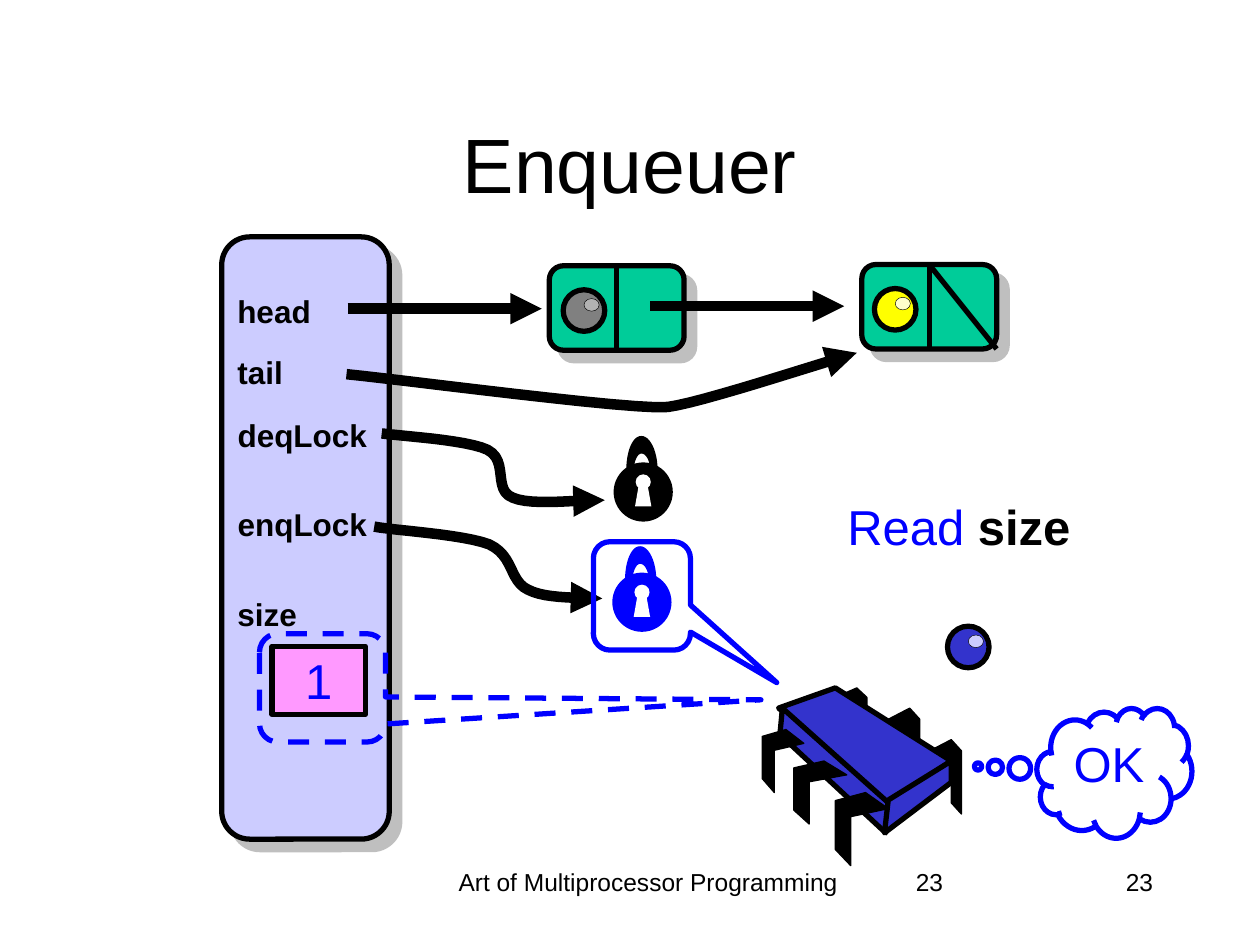
import pptx
import pptx.util
import pptx.dml.color
import pptx.enum.dml
import pptx.enum.shapes
import pptx.enum.text
import pptx.oxml
import pptx.oxml.ns

COLORS = {
    "black": "000000", "white": "FFFFFF", "blue": "0000FF", "lavender": "CCCCFF",
    "green": "00CC99", "gray": "808080", "silver": "B2B2B2", "yellow": "FFFF00",
    "cream": "FFFFCC", "pink": "FF99FF", "chip": "3333CC",
}
COLUMNS, ROWS = 100, 75
FONT = "Arial"
SHAPE = pptx.enum.shapes.MSO_SHAPE
ALIGN = pptx.enum.text.PP_ALIGN
ANCHOR = pptx.enum.text.MSO_ANCHOR
NAMESPACE = pptx.oxml.ns.nsdecls("a")
SHADOW = (f'<a:outerShdw {NAMESPACE} dist="107950" dir="2700000" algn="ctr" rotWithShape="0">'
          f'<a:srgbClr val="{COLORS["gray"]}"><a:alpha val="50000"/></a:srgbClr></a:outerShdw>')

BACK_LEG = [(0, .15), (.68, 0), (1, .15), (1, 1), (.68, .85), (.68, .29), (0, .43)]
FRONT_LEG = [(.57, 0), (1, .22), (.29, .33), (.29, 1), (0, .78), (0, .11)]


def color(name):
    return pptx.dml.color.RGBColor.from_string(COLORS[name])


def write_text(shape, *parts, size=18, ink="black", bold=False, align=ALIGN.CENTER,
               anchor=ANCHOR.TOP, wrap=True):
    frame = shape.text_frame
    frame.word_wrap = wrap
    frame.vertical_anchor = anchor
    paragraph = frame.paragraphs[0]
    paragraph.alignment = align
    for part in parts:
        text, part_ink, part_bold = part if isinstance(part, tuple) else (part, ink, bold)
        run = paragraph.add_run()
        run.text = text
        run.font.name = FONT
        run.font.size = pptx.util.Pt(size)
        run.font.bold = part_bold
        run.font.color.rgb = color(part_ink)


def scaled(outline, left, top, width, height):
    return [(left + x * width, top + y * height) for x, y in outline]


def curve(start, *segments, steps=12):
    points = [start]
    for first, second, end in segments:
        begin = points[-1]
        for step in range(1, steps + 1):
            t = step / steps
            weights = ((1 - t) ** 3, 3 * t * (1 - t) ** 2, 3 * t ** 2 * (1 - t), t ** 3)
            corners = (begin, first, second, end)
            points.append(tuple(sum(w * corner[axis] for w, corner in zip(weights, corners))
                                for axis in (0, 1)))
    return points


class Diagram:
    def __init__(self, presentation):
        self.slide = presentation.slides.add_slide(presentation.slide_layouts[5])
        self.column = presentation.slide_width / COLUMNS
        self.row = presentation.slide_height / ROWS
        self.canvas = self.slide.shapes

    def place(self, *lengths):
        return [round(length * (self.row if index % 2 else self.column))
                for index, length in enumerate(lengths)]

    def group(self):
        self.canvas = self.slide.shapes.add_group_shape().shapes

    def ungroup(self):
        self.canvas = self.slide.shapes

    def title(self, text, *box):
        title = self.slide.shapes.title
        title.left, title.top, title.width, title.height = self.place(*box)
        write_text(title, text, size=44, anchor=ANCHOR.MIDDLE)

    def text(self, *parts, box, **style):
        write_text(self.canvas.add_textbox(*self.place(*box)), *parts, **style)

    def paint(self, shape, fill, line, weight):
        shape.shadow.inherit = False
        if fill:
            shape.fill.solid()
            shape.fill.fore_color.rgb = color(fill)
        else:
            shape.fill.background()
        if line:
            shape.line.color.rgb = color(line)
            shape.line.width = pptx.util.Pt(weight)
        else:
            shape.line.fill.background()

    def shape(self, kind, *box, fill=None, line="black", weight=3, shadow=False, adjust=()):
        shape = self.canvas.add_shape(kind, *self.place(*box))
        for index, value in enumerate(adjust):
            shape.adjustments[index] = value
        self.paint(shape, fill, line, weight)
        if shadow:
            effects = shape.element.spPr.find(pptx.oxml.ns.qn("a:effectLst"))
            effects.append(pptx.oxml.parse_xml(SHADOW))
        return shape

    def arrowhead(self, shape):
        outline = shape.element.spPr.find(pptx.oxml.ns.qn("a:ln"))
        outline.append(pptx.oxml.parse_xml(f'<a:tailEnd {NAMESPACE} type="triangle"/>'))

    def outline(self, points, fill=None, line="black", weight=3, closed=True, arrow=False):
        points = [self.place(*point) for point in points]
        builder = self.canvas.build_freeform(*points[0])
        builder.add_line_segments(points[1:], close=closed)
        shape = builder.convert_to_shape()
        self.paint(shape, fill, line, weight)
        if arrow:
            self.arrowhead(shape)

    def curved_arrow(self, start, *segments):
        self.outline(curve(start, *segments), weight=6, closed=False, arrow=True)

    def connector(self, start, end, weight=3, arrow=False):
        connector = self.canvas.add_connector(
            pptx.enum.shapes.MSO_CONNECTOR.STRAIGHT, *self.place(*start, *end))
        connector.line.color.rgb = color("black")
        connector.line.width = pptx.util.Pt(weight)
        if arrow:
            self.arrowhead(connector)
        connector.element.spPr.append(pptx.oxml.parse_xml(f"<a:effectLst {NAMESPACE}/>"))
        return connector

    def ball(self, left, top, fill, shine):
        self.group()
        self.shape(SHAPE.OVAL, left, top, 3.3, 3.3, fill=fill)
        self.shape(SHAPE.OVAL, left + 1.65, top + .7, 1.2, 1, fill=shine, weight=.25)
        self.ungroup()

    def node(self, left, top):
        self.group()
        node = self.shape(SHAPE.ROUNDED_RECTANGLE, left, top, 10.7, 6.7, fill="green", shadow=True)
        middle = left + 5.35
        divider = self.connector((middle, top), (middle, top + 6.7))
        divider.begin_connect(node, 0)
        divider.end_connect(node, 2)
        self.ungroup()
        return node

    def lock(self, left, top, fill):
        self.group()
        self.shape(SHAPE.OVAL, left, top, 4.7, 4.7, fill=fill, line=None)
        self.shape(SHAPE.OVAL, left + 1.75, top + .95, 1.2, 1.2, fill="white", line=None)
        keyhole = [(1.7, 3.5), (2, 1.8), (2.7, 1.8), (3, 3.5)]
        inner = curve((1.6, .7), ((1.6, -.1), (1.9, -.7), (2.2, -.7)),
                      ((2.6, -.7), (2.9, -.1), (2.9, .7)))
        outer = curve((3.5, .7), ((3.5, -.9), (2.9, -2.1), (2.2, -2.1)),
                      ((1.5, -2.1), (1, -.9), (1, .7)))
        for points, paint in ((keyhole, "white"), (inner + outer, fill)):
            self.outline(scaled(points, left, top, 1, 1), fill=paint, line=None)
        self.ungroup()

    def processor(self):
        self.group()
        for box in ((73.8, 58.7, 2.5, 5.9), (70.5, 56.2, 2.5, 5.9), (66.3, 54.6, 2.5, 5)):
            self.outline(scaled(BACK_LEG, *box), fill="black", weight=.75)
        for face in ([(66.3, 54.6), (75.5, 60.4), (70.3, 63.9), (61.8, 56.2)],
                     [(62.1, 56.2), (70.5, 63.7), (70.3, 66.1), (61.9, 58.3)],
                     [(75.5, 60.4), (75.5, 62.1), (70.2, 66.1), (70.5, 63.5)]):
            self.outline(face, fill="chip")
        for box in ((66.3, 62.9, 4.2, 5.8), (63, 60.4, 4.2, 5), (60.5, 57.9, 3.3, 5)):
            self.outline(scaled(FRONT_LEG, *box), fill="black", weight=.75)
        self.ungroup()


def main():
    presentation = pptx.Presentation()
    presentation.slide_width = pptx.util.Inches(10)
    presentation.slide_height = pptx.util.Inches(7.5)
    diagram = Diagram(presentation)

    diagram.shape(SHAPE.ROUNDED_RECTANGLE, 17.6, 18.8, 13.3, 47.8, fill="lavender", shadow=True)
    diagram.text("Art of Multiprocessor Programming", box=(34.2, 68.3, 34.5, 5), size=14)
    for align in (ALIGN.LEFT, ALIGN.RIGHT):
        diagram.text("23", box=(71.7, 68.3, 20.8, 5), size=14, align=align)
    diagram.title("Enqueuer", 7.5, 6.7, 85, 12.5)

    diagram.connector((27.6, 24.5), (43, 24.5), weight=6, arrow=True)
    diagram.node(43.6, 21.1)
    diagram.ball(44.7, 23, "gray", "silver")
    last_node = diagram.node(68.4, 21)
    diagram.connector((73.75, 21), (79.1, 27.7)).begin_connect(last_node, 0)
    diagram.ball(69.4, 22.9, "yellow", "cream")
    diagram.connector((51.6, 24.3), (67, 24.3), weight=6, arrow=True)

    diagram.curved_arrow((27.5, 29.7), ((31.7, 30.1), (50.4, 32.6), (53, 32.3)),
                         ((55.5, 32), (64.9, 28.9), (68, 28)))
    diagram.lock(48.7, 36.7, "black")
    diagram.curved_arrow((30.3, 34.4), ((31.7, 34.6), (37, 34.9), (38.7, 35.7)),
                         ((40.4, 36.6), (39.1, 38.9), (40.7, 39.5)),
                         ((42.2, 40.2), (46.5, 39.6), (48, 39.7)))
    diagram.curved_arrow((29.7, 41.8), ((31.2, 42.1), (36.7, 42.4), (38.8, 43.2)),
                         ((40.8, 44.1), (40.4, 46.1), (41.9, 46.8)),
                         ((43.4, 47.6), (46.5, 47.4), (47.8, 47.5)))

    callout = SHAPE.ROUNDED_RECTANGULAR_CALLOUT
    diagram.shape(callout, 47.1, 43, 7.7, 8.6, line="blue", adjust=(1.39, .8, .17))
    size_value = diagram.shape(SHAPE.RECTANGLE, 21.6, 51.3, 7.4, 5.4, fill="pink")
    write_text(size_value, "1", size=28, ink="blue", anchor=ANCHOR.MIDDLE, wrap=False)
    diagram.text("Read ", ("size", "black", True), box=(57.6, 38.9, 37, 5.7), size=28, ink="blue")
    size_callout = diagram.shape(callout, 20.6, 50.3, 10, 8.6, line="blue",
                                 adjust=(3.48, .11, .17))
    size_callout.line.dash_style = pptx.enum.dml.MSO_LINE.DASH
    thought = diagram.shape(SHAPE.CLOUD_CALLOUT, 82.3, 56.2, 12.3, 10.3, line="blue",
                            adjust=(-.88, -.05))
    write_text(thought, "OK", size=28, ink="blue")

    diagram.processor()
    diagram.ball(75.2, 49.7, "chip", "lavender")
    diagram.lock(48.6, 45.45, "blue")

    for label, top, width in (("head", 22.7, 7.9), ("tail", 27.5, 5.7), ("deqLock", 32.5, 12.4),
                              ("enqLock", 39.6, 12.4), ("size", 46.7, 6.8)):
        diagram.text(label, box=(17.8, top, width, 4), bold=True, wrap=False)

    presentation.save("out.pptx")


if __name__ == "__main__":
    main()
